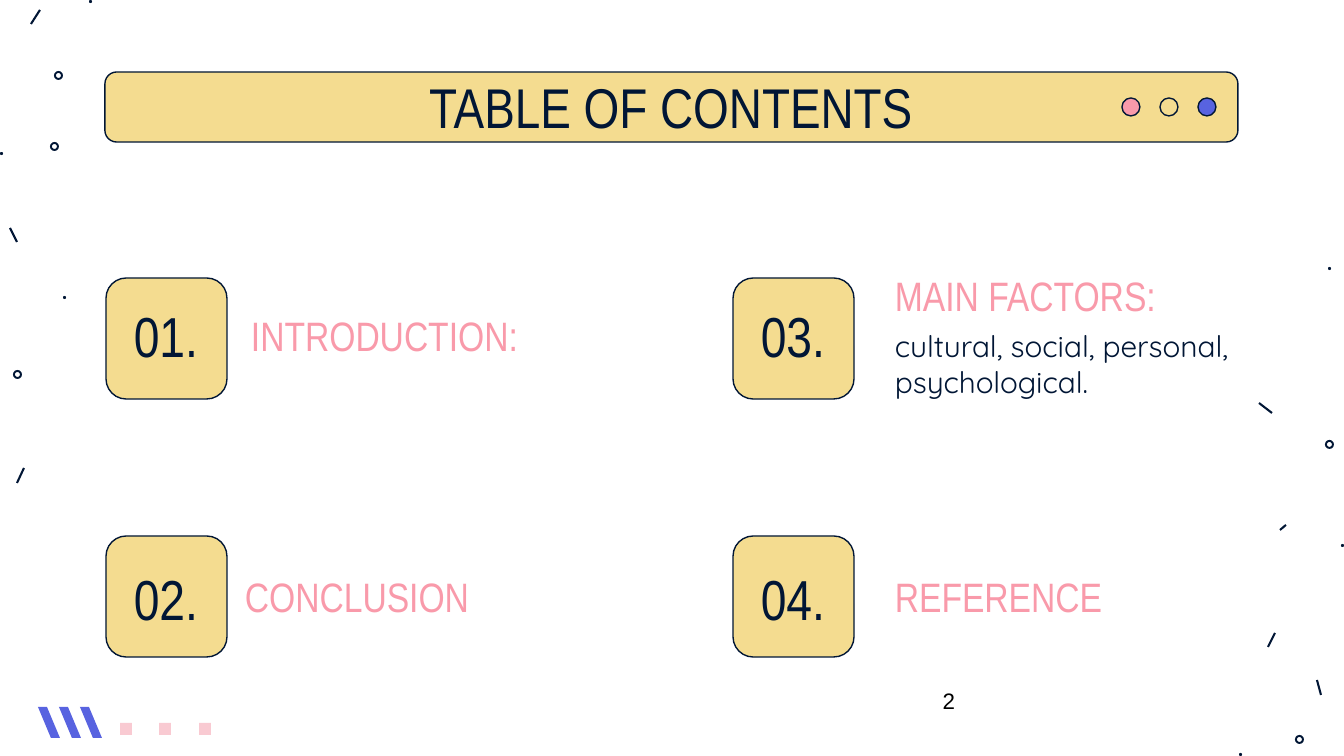
"""Build a table of contents slide with numbered cards and confetti margins."""
from dataclasses import dataclass

from lxml import etree
from pptx import Presentation
from pptx import util as u
from pptx.dml.color import RGBColor
from pptx.enum import shapes, text
from pptx.oxml.ns import qn

SHAPE = shapes.MSO_SHAPE
ALIGN = text.PP_ALIGN


@dataclass(frozen=True)
class Theme:
    ink: str = "011635"
    gold: str = "F4DC90"
    pink: str = "F99AAA"
    pale: str = "F9CAD2"
    blue: str = "5863E0"
    black: str = "000000"
    head: str = "Arial Narrow"
    body: str = "Quicksand"
    plain: str = "Arial"
    title: float = 30
    number: float = 30.2
    topic: float = 22
    detail: float = 16
    page: float = 12
    edge: float = 0.75
    dash: float = 1.1


def px(n):
    return u.Emu(round(n * 914400 / 134.4))


class Deck:
    def __init__(self, theme):
        self.theme = theme
        self.file = Presentation()
        self.file.slide_width, self.file.slide_height = px(1344), px(756)
        self.slide = self.file.slides.add_slide(self.file.slide_layouts[6])
        self.items = self.slide.shapes

    def paint(self, item, fill, edge=False):
        item.shadow.inherit = False
        item.fill.solid()
        item.fill.fore_color.rgb = RGBColor.from_string(fill)
        if edge:
            item.line.color.rgb = RGBColor.from_string(self.theme.ink)
            item.line.width = u.Pt(self.theme.edge)
        else:
            item.line.fill.background()

    def shape(self, kind, x, y, w, h, fill, edge=False):
        item = self.items.add_shape(kind, px(x), px(y), px(w), px(h))
        self.paint(item, fill, edge)
        return item

    def ring(self, x, y):
        item = self.shape(SHAPE.DONUT, x, y, 9, 9, self.theme.ink)
        item.adjustments[0] = 0.22

    def dash(self, x1, y1, x2, y2):
        item = self.items.add_connector(
            shapes.MSO_CONNECTOR.STRAIGHT, px(x1), px(y1), px(x2), px(y2))
        item.line.color.rgb = RGBColor.from_string(self.theme.ink)
        item.line.width = u.Pt(self.theme.dash)
        etree.SubElement(item._element.spPr, qn("a:effectLst"))

    def slash(self, x, y):
        pen = self.items.build_freeform(px(x), px(y), scale=1.0)
        points = [(9, 0), (22, 31), (13, 31)]
        pen.add_line_segments([(px(x + a), px(y + b)) for a, b in points])
        self.paint(pen.convert_to_shape(), self.theme.blue)

    def label(self, words, x, y, w, h, size, color,
              font=None, align=ALIGN.LEFT, inset=0):
        frame = self.items.add_textbox(px(x), px(y), px(w), px(h)).text_frame
        frame.word_wrap = True
        frame.vertical_anchor = text.MSO_ANCHOR.MIDDLE
        frame.margin_left = frame.margin_right = px(inset)
        frame.margin_top = frame.margin_bottom = px(inset)
        para = frame.paragraphs[0]
        para.text = words
        para.alignment = align
        para.font.name = font or self.theme.head
        para.font.size = u.Pt(size)
        para.font.color.rgb = RGBColor.from_string(color)

    def card(self, number, x, y, drop):
        self.shape(SHAPE.ROUNDED_RECTANGLE, x, y, 121, 121, self.theme.gold, True)
        self.label(number, x + 20, y + drop, 80, 69, self.theme.number,
                   self.theme.ink, align=ALIGN.CENTER)

    def topic(self, words, x, y):
        self.label(words, x, y, 343, 69, self.theme.topic, self.theme.pink)


def main():
    theme = Theme()
    deck = Deck(theme)

    for ends in [(40, 10, 31, 24), (10, 228, 17, 242), (24, 468, 17, 483),
                 (1259, 403, 1272, 413), (1317, 680, 1321, 695),
                 (1275, 633, 1268, 647), (1286, 525, 1280, 530)]:
        deck.dash(*ends)
    for spot in [(54, 71), (13, 370), (50, 142), (1325, 440), (1295, 735)]:
        deck.ring(*spot)
    for x, y in [(63, 296), (89, 0), (0, 152), (1341, 544), (1239, 753), (1328, 267)]:
        deck.shape(SHAPE.OVAL, x, y, 3, 3, theme.ink)

    for i in range(3):
        deck.slash(38 + 21 * i, 707)
        deck.shape(SHAPE.RECTANGLE, 120 + 79 * i // 2, 723, 12, 12, theme.pale)

    deck.shape(SHAPE.ROUNDED_RECTANGLE, 105, 72, 1133, 70, theme.gold, True)
    deck.label("TABLE OF CONTENTS", 200, 72, 942, 69, theme.title,
               theme.ink, align=ALIGN.CENTER)
    for i, fill in enumerate([theme.pink, theme.gold, theme.blue]):
        deck.shape(SHAPE.OVAL, 1122 + 38 * i, 98, 18, 18, fill, True)

    for col, x in enumerate([106, 733]):
        for row, (y, drop) in enumerate([(278, 23), (536, 28)]):
            deck.card(f"0{2 * col + row + 1}.", x, y, drop)

    for words, x, y in [("INTRODUCTION:", 251, 301), ("CONCLUSION", 245, 562),
                        ("MAIN FACTORS:", 895, 261), ("REFERENCE", 895, 562)]:
        deck.topic(words, x, y)
    deck.label("cultural, social, personal, psychological.", 895, 320, 343, 87,
               theme.detail, theme.ink, theme.body)
    deck.label("2", 649, 680, 313, 42, theme.page, theme.black,
               theme.plain, ALIGN.RIGHT, 7)

    deck.file.save("out.pptx")


if __name__ == "__main__":
    main()
